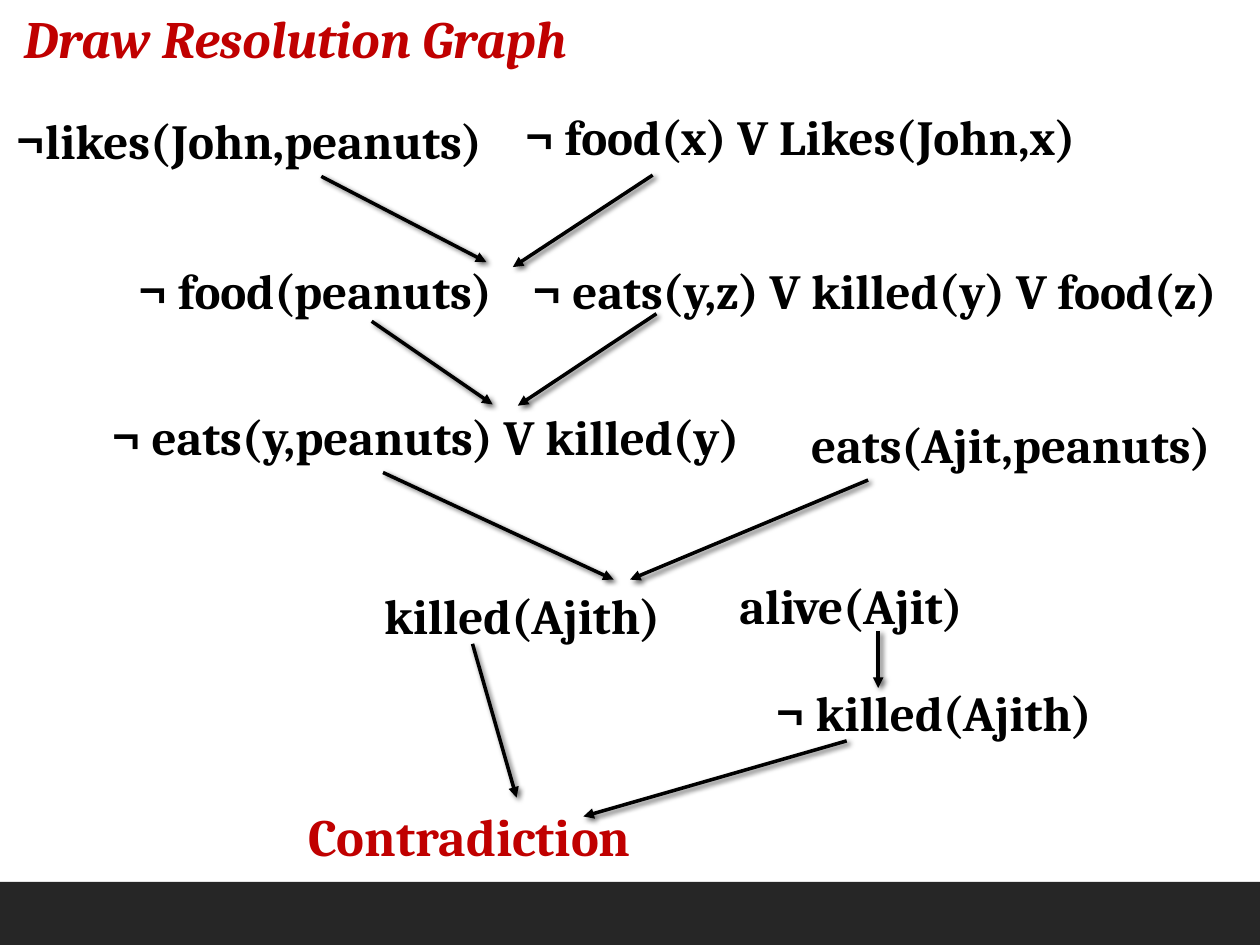
from lxml import etree
from pptx import Presentation
from pptx.dml.color import RGBColor
from pptx.enum.shapes import MSO_CONNECTOR, MSO_SHAPE
from pptx.enum.text import MSO_AUTO_SIZE, PP_ALIGN
from pptx.oxml import parse_xml
from pptx.oxml.ns import qn
from pptx.util import Inches, Pt

COLORS = {"text": "000000", "accent": "C00000", "footer": "262626"}
FONT = "Cambria"

TITLE = ("Draw Resolution Graph", 0.09, 0, 8.35)
CONCLUSION = ("Contradiction", 2.35, 6.33, 2.87)

# text, left, top, width
CLAUSES = [
    ("¬likes(John,peanuts)", 0.03, 0.83, 5.03),
    ("¬ food(x) V Likes(John,x)", 4.07, 0.8, 5.03),
    ("¬ food(peanuts)", 1, 2.02, 3.11),
    ("¬ eats(y,z) V killed(y) V food(z)", 4.13, 2.02, 6.13),
    ("¬ eats(y,peanuts) V killed(y)", 0.79, 3.18, 6.13),
    ("eats(Ajit,peanuts) ", 6.34, 3.24, 3.47),
    ("killed(Ajith)", 2.95, 4.6, 2.73),
    ("alive(Ajit)", 5.77, 4.52, 3.21),
    ("¬ killed(Ajith)", 6.06, 5.37, 2.73),
]

# start, end
ARROWS = [
    ((2.55, 1.4), (3.86, 2.08)),
    ((5.18, 1.39), (4.07, 2.12)),
    ((2.95, 2.55), (3.91, 3.21)),
    ((5.21, 2.49), (4.11, 3.22)),
    ((3.04, 3.75), (4.87, 4.6)),
    ((6.89, 3.81), (5, 4.6)),
    ((6.97, 5.01), (6.97, 5.46)),
    ((3.75, 5.11), (4.1, 6.33)),
    ((6.72, 5.88), (4.63, 6.48)),
]

SHADOW = f"""
<a:effectLst xmlns:a="http://schemas.openxmlformats.org/drawingml/2006/main">
  <a:outerShdw blurRad="{Pt(3)}" dist="{Pt(2)}" dir="{45 * 60000}" algn="tl" rotWithShape="0">
    <a:srgbClr val="{COLORS['text']}"><a:alpha val="60000"/></a:srgbClr>
  </a:outerShdw>
</a:effectLst>"""


def rgb(name):
    return RGBColor.from_string(COLORS[name])


def add_label(slide, label, size=28, height=0.57, color="text", italic=False, wrap=True):
    text, left, top, width = label
    box = slide.shapes.add_textbox(Inches(left), Inches(top), Inches(width), Inches(height))
    tf = box.text_frame
    tf.word_wrap = wrap
    tf.auto_size = MSO_AUTO_SIZE.SHAPE_TO_FIT_TEXT
    tf.text = text
    p = tf.paragraphs[0]
    p.alignment = PP_ALIGN.JUSTIFY if wrap else PP_ALIGN.LEFT
    font = p.runs[0].font
    font.name, font.size = FONT, Pt(size)
    font.bold, font.italic = True, italic
    font.color.rgb = rgb(color)


def add_arrow(slide, start, end):
    points = [Inches(v) for v in start + end]
    line = slide.shapes.add_connector(MSO_CONNECTOR.STRAIGHT, *points)
    line.line.color.rgb = rgb("text")
    line.line.width = Pt(2)
    etree.SubElement(line.line._get_or_add_ln(), qn("a:tailEnd"), type="triangle")
    line._element.spPr.append(parse_xml(SHADOW))


def main():
    prs = Presentation()
    prs.slide_width, prs.slide_height = Inches(10), Inches(7.5)
    s = prs.slides.add_slide(prs.slide_layouts[6])

    footer = s.shapes.add_shape(
        MSO_SHAPE.RECTANGLE, 0, Inches(7), prs.slide_width, Inches(0.5))
    footer.shadow.inherit = False
    footer.fill.solid()
    footer.fill.fore_color.rgb = rgb("footer")
    footer.line.fill.background()

    add_label(s, TITLE, size=30, height=0.61, color="accent", italic=True)
    for clause in CLAUSES:
        add_label(s, clause)
    for start, end in ARROWS:
        add_arrow(s, start, end)
    add_label(s, CONCLUSION, size=30, height=0.61, color="accent", wrap=False)

    prs.save("out.pptx")


if __name__ == "__main__":
    main()
